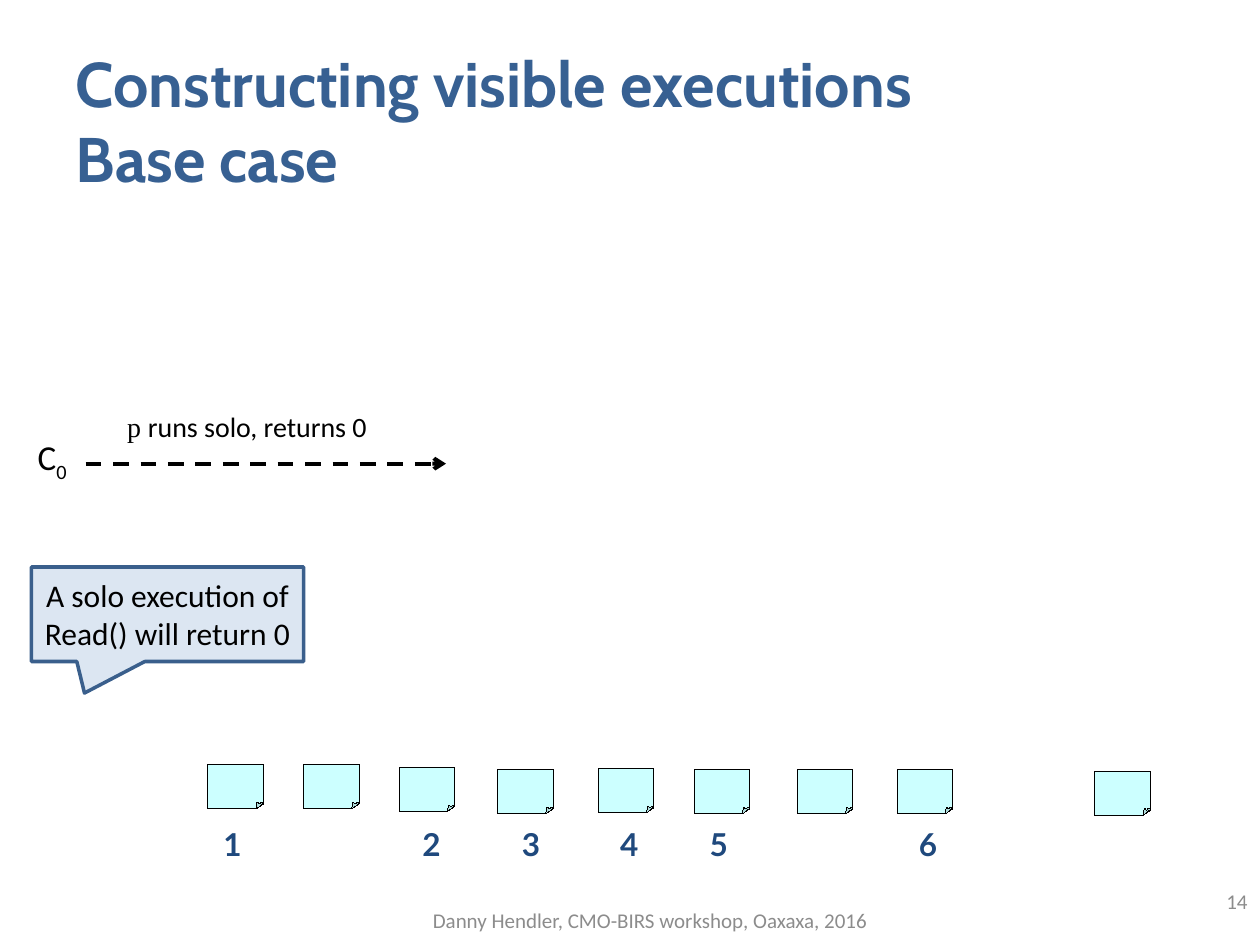
from dataclasses import dataclass

from lxml import etree
from pptx import Presentation
from pptx.dml.color import RGBColor
from pptx.enum.dml import MSO_LINE
from pptx.enum.shapes import MSO_CONNECTOR, MSO_SHAPE
from pptx.enum.text import MSO_ANCHOR, MSO_AUTO_SIZE, PP_ALIGN
from pptx.oxml.ns import qn
from pptx.util import Inches, Pt

LEFT, CENTER, RIGHT = PP_ALIGN.LEFT, PP_ALIGN.CENTER, PP_ALIGN.RIGHT
TOP, MIDDLE = MSO_ANCHOR.TOP, MSO_ANCHOR.MIDDLE
NO_FIT = MSO_AUTO_SIZE.NONE
STRAIGHT = MSO_CONNECTOR.STRAIGHT
DASH = MSO_LINE.DASH
CALLOUT = MSO_SHAPE.RECTANGULAR_CALLOUT

NOTE_SHEET = [(0, 0), (0.44, 0), (0.44, 0.31), (0.38, 0.35), (0, 0.35), (0, 0)]
NOTE_FOLD = [(0.38, 0.35), (0.39, 0.3), (0.4, 0.3), (0.41, 0.31), (0.42, 0.3),
             (0.44, 0.3), (0.38, 0.35)]


@dataclass(frozen=True)
class Theme:
    title: str = "376092"
    ink: str = "000000"
    muted: str = "8C8C8C"
    number: str = "1F497D"
    note: str = "CCFFFF"
    fold: str = "AFDBDB"
    callout: str = "DCE6F2"
    callout_line: str = "3A5F8C"
    title_font: str = "Cabin"
    body_font: str = "Calibri"
    number_font: str = "Lato"
    process_font: str = "Times New Roman"
    title_size: int = 36
    state_size: int = 20
    body_size: int = 18
    arrow_size: int = 16
    footer_size: int = 12


THEME = Theme()


def color(value):
    return RGBColor.from_string(value)


def add_span(para, text, font, size, ink, bold=False):
    span = para.add_run()
    span.text = text
    span.font.name = font
    span.font.size = Pt(size)
    span.font.bold = bold
    span.font.color.rgb = color(ink)
    return span


def add_box(page, left, top, width, height, align=LEFT, anchor=TOP):
    box = page.shapes.add_textbox(Inches(left), Inches(top), Inches(width), Inches(height))
    frame = box.text_frame
    frame.word_wrap = True
    frame.vertical_anchor = anchor
    para = frame.paragraphs[0]
    para.alignment = align
    return para


def add_title(page, left, top, width, height, lines):
    title = page.shapes.title
    title.left, title.top = Inches(left), Inches(top)
    title.width, title.height = Inches(width), Inches(height)
    frame = title.text_frame
    frame.auto_size = NO_FIT
    frame.vertical_anchor = TOP
    para = frame.paragraphs[0]
    para.alignment = LEFT
    for index, line in enumerate(lines):
        if index:
            para.add_line_break()
        add_span(para, line, THEME.title_font, THEME.title_size, THEME.title, True)


def add_execution(page, left, top):
    state = add_box(page, left, top + 0.21, 0.79, 0.44)
    add_span(state, "C", THEME.body_font, THEME.state_size, THEME.ink)
    index = add_span(state, "0", THEME.body_font, THEME.state_size, THEME.ink)
    index.font._element.set("baseline", "-25000")

    y = Inches(top + 0.48)
    arrow = page.shapes.add_connector(STRAIGHT, Inches(left + 0.48), y, Inches(left + 3.34), y)
    arrow.line.color.rgb = color(THEME.ink)
    arrow.line.width = Pt(2.25)
    arrow.line.dash_style = DASH
    etree.SubElement(arrow.line._get_or_add_ln(), qn("a:tailEnd"), type="arrow")
    etree.SubElement(arrow._element.spPr, qn("a:effectLst"))

    label = add_box(page, left + 0.71, top, 3.31, 0.37)
    add_span(label, "p ", THEME.process_font, THEME.arrow_size, THEME.ink)
    add_span(label, "runs solo, returns 0", THEME.body_font, THEME.arrow_size, THEME.ink)


def add_callout(page, left, top, width, height, text):
    callout = page.shapes.add_shape(CALLOUT, Inches(left), Inches(top),
                                    Inches(width), Inches(height))
    callout.shadow.inherit = False
    callout.fill.solid()
    callout.fill.fore_color.rgb = color(THEME.callout)
    callout.line.color.rgb = color(THEME.callout_line)
    callout.line.width = Pt(2)
    callout.adjustments[0] = -0.305
    callout.adjustments[1] = 0.834
    frame = callout.text_frame
    frame.word_wrap = True
    frame.vertical_anchor = MIDDLE
    frame.margin_left = frame.margin_right = Inches(0.08)
    para = frame.paragraphs[0]
    para.alignment = CENTER
    add_span(para, text, THEME.body_font, THEME.body_size, THEME.ink)


def add_outline(page, left, top, points, close):
    corners = [(Inches(left + x), Inches(top + y)) for x, y in points]
    builder = page.shapes.build_freeform(*corners[0], scale=1.0)
    builder.add_line_segments(corners[1:], close=close)
    shape = builder.convert_to_shape()
    shape.shadow.inherit = False
    return shape


def add_note_part(page, left, top, points, fill):
    surface = add_outline(page, left, top, points, True)
    surface.fill.solid()
    surface.fill.fore_color.rgb = color(fill)
    surface.line.fill.background()
    edge = add_outline(page, left, top, points, False)
    edge.fill.background()
    edge.line.color.rgb = color(THEME.ink)
    edge.line._get_or_add_ln().set("w", "0")


def add_registers(page, notes, numbers, number_top):
    for left, top in notes:
        add_note_part(page, left, top, NOTE_SHEET, THEME.note)
        add_note_part(page, left, top, NOTE_FOLD, THEME.fold)
    for number, left in enumerate(numbers, start=1):
        para = add_box(page, left, number_top, 0.47, 0.4, CENTER)
        add_span(para, str(number), THEME.number_font, THEME.body_size, THEME.number, True)


def add_footer(page, left, top, width, height, text, align):
    para = add_box(page, left, top, width, height, align, MIDDLE)
    add_span(para, text, THEME.body_font, THEME.footer_size, THEME.muted)


def main():
    deck = Presentation()
    deck.slide_width, deck.slide_height = Inches(10), Inches(7.5)
    page = deck.slides.add_slide(deck.slide_layouts[5])
    add_title(page, 0.5, 0.3, 8.44, 1.2, ["Constructing visible executions", "Base case"])
    add_execution(page, 0.2, 3.2)
    add_callout(page, 0.25, 4.5, 2.16, 0.75, "A solo execution of Read() will return 0")
    notes = [(1.65, 6.07), (2.41, 6.07), (3.17, 6.09), (3.95, 6.11), (4.75, 6.1),
             (5.51, 6.11), (6.33, 6.11), (7.12, 6.11), (8.69, 6.12)]
    add_registers(page, notes, [1.61, 3.19, 3.98, 4.76, 5.47, 7.13], 6.5)
    add_footer(page, 7.67, 6.95, 2.33, 0.4, "14", RIGHT)
    add_footer(page, 0.91, 7.1, 8.5, 0.4,
               "Danny Hendler, CMO-BIRS workshop, Oaxaxa, 2016", CENTER)
    deck.save("out.pptx")


if __name__ == "__main__":
    main()
